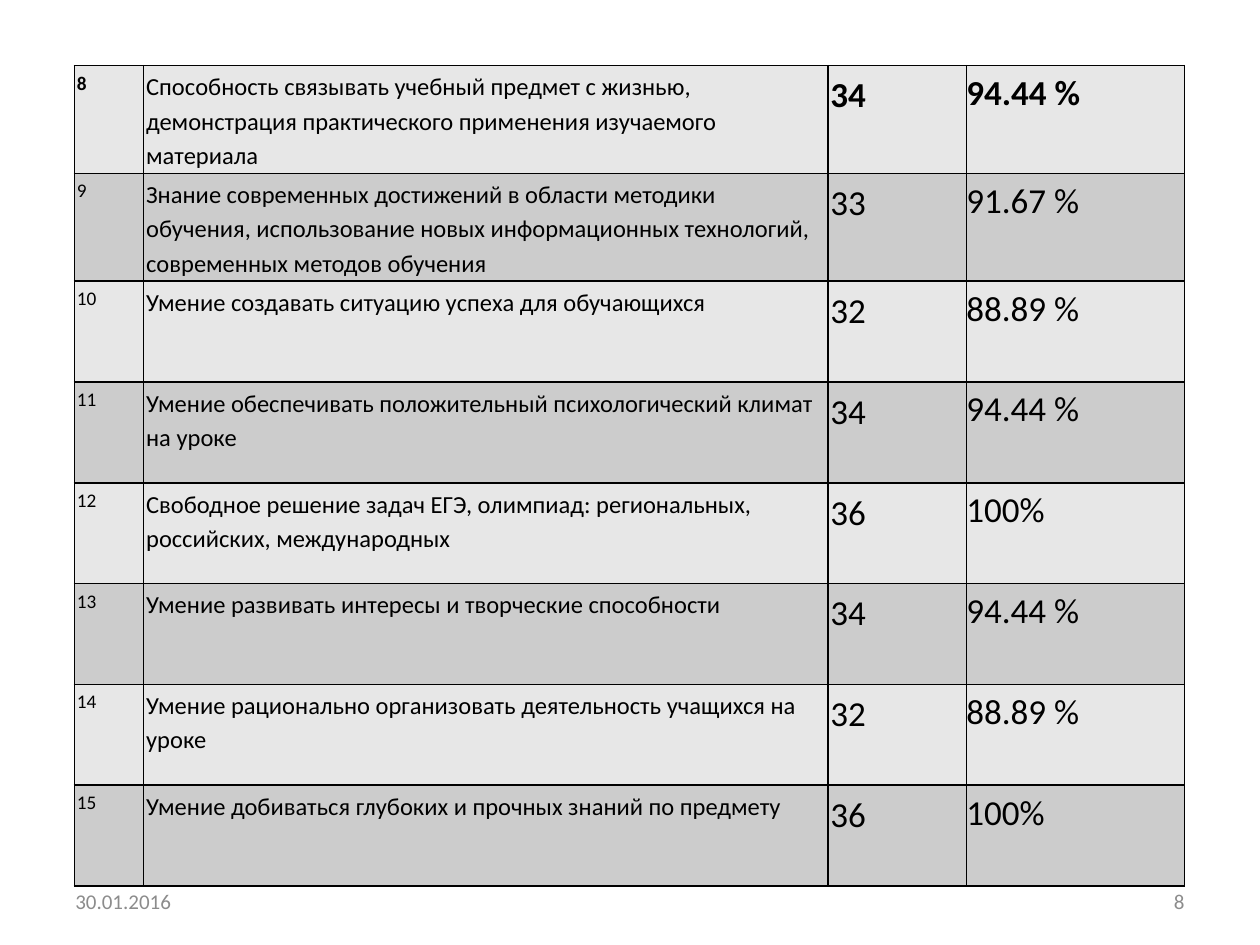
import pptx
import pptx.util
import pptx.dml.color
import pptx.enum.text
import pptx.oxml
import pptx.oxml.ns
from pptx.util import Inches

ALIGN = pptx.enum.text.PP_ALIGN


def style(para, size, color, bold=False):
    font = para.font
    looks = {"name": "Calibri", "size": pptx.util.Pt(size), "bold": bold}
    for key, value in looks.items():
        setattr(font, key, value)
    font.color.rgb = pptx.dml.color.RGBColor.from_string(color)


def border(cell):
    """Draw a thin black line on all four sides; call before the fill is set."""
    props = cell._tc.get_or_add_tcPr()
    for side in ("lnL", "lnR", "lnT", "lnB"):
        props.append(pptx.oxml.parse_xml(
            f'<a:{side} {pptx.oxml.ns.nsdecls("a")} w="12700">'
            '<a:solidFill><a:srgbClr val="000000"/></a:solidFill>'
            f'</a:{side}>'))


rows = [
    ("8", "Способность связывать учебный предмет с жизнью, демонстрация "
     "практического применения изучаемого материала", "34", "94.44 %"),
    ("9", "Знание современных достижений в области методики обучения, "
     "использование новых информационных технологий, современных методов "
     "обучения", "33", "91.67 %"),
    ("10", "Умение создавать ситуацию успеха для обучающихся",
     "32", "88.89 %"),
    ("11", "Умение обеспечивать положительный психологический климат на уроке",
     "34", "94.44 %"),
    ("12", "Свободное решение задач ЕГЭ, олимпиад: региональных, российских, "
     "международных", "36", "100%"),
    ("13", "Умение развивать интересы и творческие способности",
     "34", "94.44 %"),
    ("14", "Умение рационально организовать деятельность учащихся на уроке",
     "32", "88.89 %"),
    ("15", "Умение добиваться глубоких и прочных знаний по предмету",
     "36", "100%"),
]
widths = [0.55, 5.43, 1.1, 1.73]
sizes = [11, 14, 20, 20]
insets = [0.02, 0.02, 0.02, 0]
bands = ["E7E7E7", "CCCCCC"]

prs = pptx.Presentation()
prs.slide_width, prs.slide_height = Inches(10), Inches(7.5)
slide = prs.slides.add_slide(prs.slide_layouts[6])

height = 0.8
table = slide.shapes.add_table(
    len(rows), len(widths), Inches(0.59), Inches(0.52),
    Inches(sum(widths)), Inches(height * len(rows))).table
for col, width in zip(table.columns, widths):
    col.width = Inches(width)

for r, row in enumerate(rows):
    table.rows[r].height = Inches(height)
    for c, text in enumerate(row):
        cell = table.cell(r, c)
        for side in ("left", "right", "top", "bottom"):
            setattr(cell, f"margin_{side}", Inches(insets[c]))
        border(cell)
        cell.fill.solid()
        cell.fill.fore_color.rgb = pptx.dml.color.RGBColor.from_string(
            bands[r % 2])
        cell.text = text
        para = cell.text_frame.paragraphs[0]
        para.line_spacing = 1.15
        para.space_after = pptx.util.Pt(10)
        style(para, sizes[c], "000000", bold=r == 0 and c != 1)

footers = [("30.01.2016", 0.5, ALIGN.LEFT), ("8", 7.17, ALIGN.RIGHT)]
for text, left, align in footers:
    frame = slide.shapes.add_textbox(
        Inches(left), Inches(6.95), Inches(2.33), Inches(0.4)).text_frame
    frame.word_wrap = True
    frame.vertical_anchor = pptx.enum.text.MSO_ANCHOR.MIDDLE
    frame.text = text
    para = frame.paragraphs[0]
    para.alignment = align
    style(para, 12, "8C8C8C")

prs.save("out.pptx")
